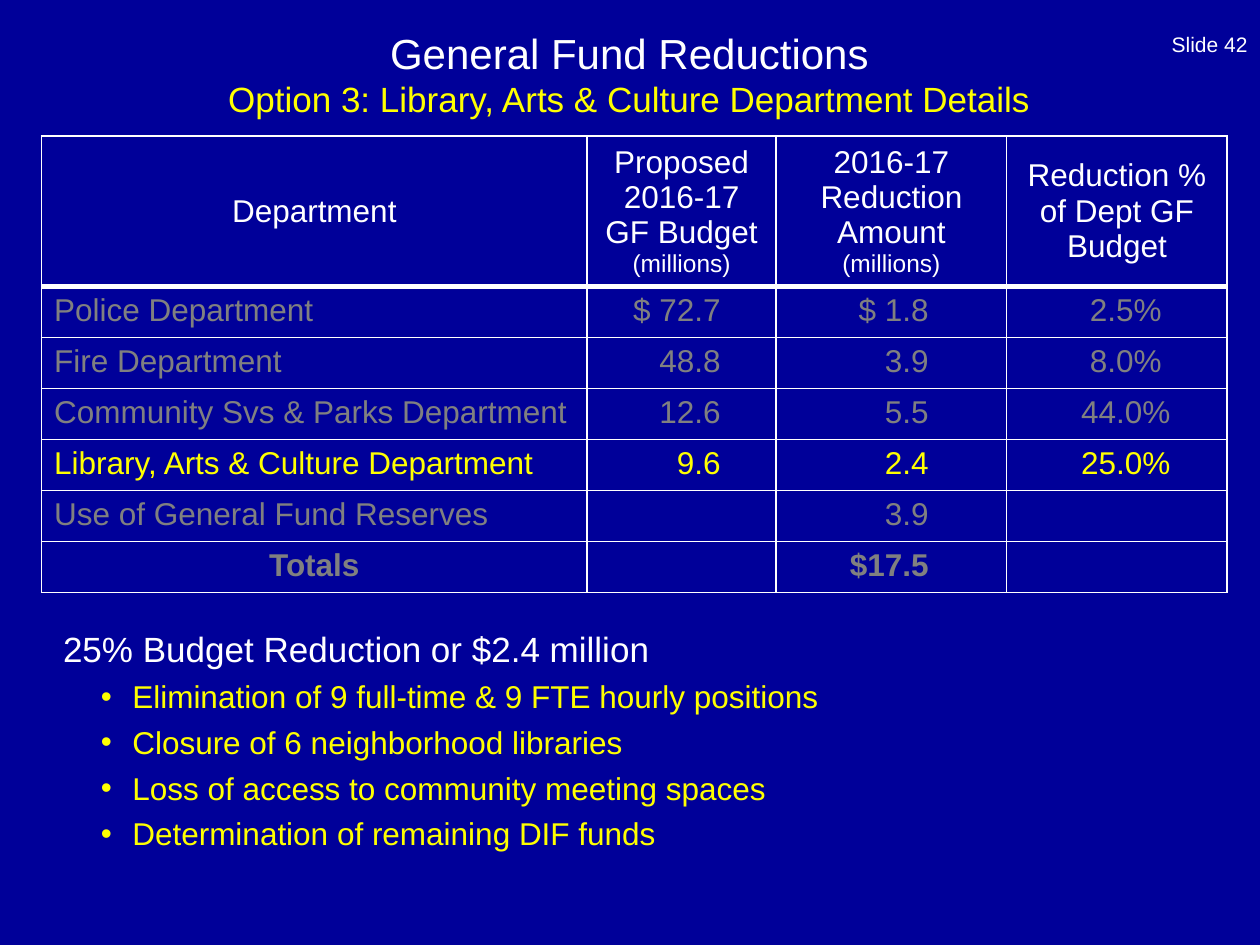
from lxml.etree import SubElement
from pptx import Presentation
from pptx.dml.color import RGBColor
from pptx.enum.text import MSO_ANCHOR as Anchor, MSO_AUTO_SIZE as AutoSize, PP_ALIGN as Align
from pptx.oxml import parse_xml
from pptx.oxml.ns import nsdecls, qn
from pptx.util import Inches, Pt

WHITE, YELLOW, GRAY, NAVY = "FFFFFF", "FFFF00", "808080", "000099"


def rgb(value):
    return RGBColor.from_string(value)


def add_text(paragraph, text, size=18, color=WHITE, bold=False, align=Align.LEFT):
    paragraph.alignment = align
    run = paragraph.add_run()
    run.text = text
    run.font.name = "Arial"
    run.font.size = Pt(size)
    run.font.bold = bold
    run.font.color.rgb = rgb(color)


deck = Presentation()
deck.slide_width, deck.slide_height = Inches(10), Inches(7.5)
slide = deck.slides.add_slide(deck.slide_layouts[1])
slide.background.fill.solid()
slide.background.fill.fore_color.rgb = rgb(NAVY)

title = slide.shapes.title
title.left, title.top, title.width, title.height = map(Inches, (0.33, 0.17, 9.33, 0.83))
title.text_frame.auto_size = AutoSize.NONE
title.text_frame.vertical_anchor = Anchor.MIDDLE
heading = title.text_frame.paragraphs[0]
add_text(heading, "General Fund Reductions", size=24, align=Align.CENTER)
heading.add_line_break()
add_text(heading, "Option 3: Library, Arts & Culture Department Details",
         size=20, color=YELLOW, align=Align.CENTER)

slide_number = slide.shapes.add_textbox(Inches(7.67), 0, Inches(2.33), Inches(0.5)).text_frame
slide_number.word_wrap = True
slide_number.vertical_anchor = Anchor.BOTTOM
add_text(slide_number.paragraphs[0], "Slide 42", size=12, align=Align.RIGHT)

headers = [
    [[("Department", 18)]],
    [[("Proposed", 18)], [("2016-17 GF Budget ", 18), ("(millions)", 14)]],
    [[("2016-17 Reduction Amount ", 18), ("(millions)", 14)]],
    [[("Reduction % of Dept GF Budget", 18)]],
]
departments = [
    ("Police Department", "$ 72.7", "$ 1.8", "2.5%"),
    ("Fire Department", "48.8", "3.9", "8.0%"),
    ("Community Svs & Parks Department", "12.6", "5.5", "44.0%"),
    ("Library, Arts & Culture Department", "9.6", "2.4", "25.0%"),
    ("Use of General Fund Reserves", "", "3.9", ""),
    ("Totals", "", "$17.5", ""),
]
column_widths = [4.33, 1.5, 1.83, 1.75]
column_aligns = [Align.LEFT, Align.RIGHT, Align.RIGHT, Align.CENTER]
left_margins = [0.1, 0.1, 0.1, 0.24]
right_margins = [0.1, 0.44, 0.62, 0.1]

budget = slide.shapes.add_table(len(departments) + 1, 4, Inches(0.33), Inches(1.08),
                                Inches(9.41), Inches(3.59)).table
budget.horz_banding = False
for column, width in zip(budget.columns, column_widths):
    column.width = Inches(width)
for index, row in enumerate(budget.rows):
    row.height = Inches(0.405 if index else 1.16)

for column, paragraphs in enumerate(headers):
    cell = budget.cell(0, column)
    cell.vertical_anchor = Anchor.MIDDLE
    cell.margin_top = cell.margin_bottom = Inches(0.03)
    for index, runs in enumerate(paragraphs):
        frame = cell.text_frame
        paragraph = frame.add_paragraph() if index else frame.paragraphs[0]
        for text, size in runs:
            add_text(paragraph, text, size=size, align=Align.CENTER)

for row, values in enumerate(departments, start=1):
    is_total = values[0] == "Totals"
    color = YELLOW if values[0].startswith("Library") else GRAY
    for column, value in enumerate(values):
        cell = budget.cell(row, column)
        cell.margin_left = Inches(left_margins[column])
        cell.margin_right = Inches(right_margins[column])
        align = Align.CENTER if is_total and column == 0 else column_aligns[column]
        add_text(cell.text_frame.paragraphs[0], value, color=color, bold=is_total, align=align)

for row in range(len(budget.rows)):
    for column in range(len(budget.columns)):
        cell = budget.cell(row, column)
        properties = cell._tc.get_or_add_tcPr()
        for side in ("L", "R", "T", "B"):
            thick = (row, side) in ((0, "B"), (1, "T"))
            properties.append(parse_xml(
                f'<a:ln{side} {nsdecls("a")} w="{Pt(3 if thick else 1)}"><a:solidFill>'
                f'<a:srgbClr val="{WHITE}"/></a:solidFill></a:ln{side}>'))
        cell.fill.background()

effects = [
    "Elimination of 9 full-time & 9 FTE hourly positions",
    "Closure of 6 neighborhood libraries",
    "Loss of access to community meeting spaces",
    "Determination of remaining DIF funds",
]
body = slide.placeholders[1]
body.left, body.top, body.width, body.height = map(Inches, (0.33, 4.93, 9.42, 2.25))
body.text_frame.auto_size = AutoSize.NONE
for index, text in enumerate(["25% Budget Reduction or $2.4 million"] + effects):
    paragraph = body.text_frame.add_paragraph() if index else body.text_frame.paragraphs[0]
    paragraph.level = 1
    paragraph.space_before = Pt(4.5 if index else 0)
    properties = paragraph._p.get_or_add_pPr()
    properties.set("marL", str(Inches(0.62 if index else 0.07)))
    properties.set("indent", str(Inches(-0.25 if index else 0)))
    if index:
        SubElement(properties, qn("a:buFont")).set("typeface", "Arial")
        SubElement(properties, qn("a:buChar")).set("char", "•")
    else:
        SubElement(properties, qn("a:buNone"))
    add_text(paragraph, text, size=18 if index else 20, color=YELLOW if index else WHITE)

deck.save("out.pptx")
